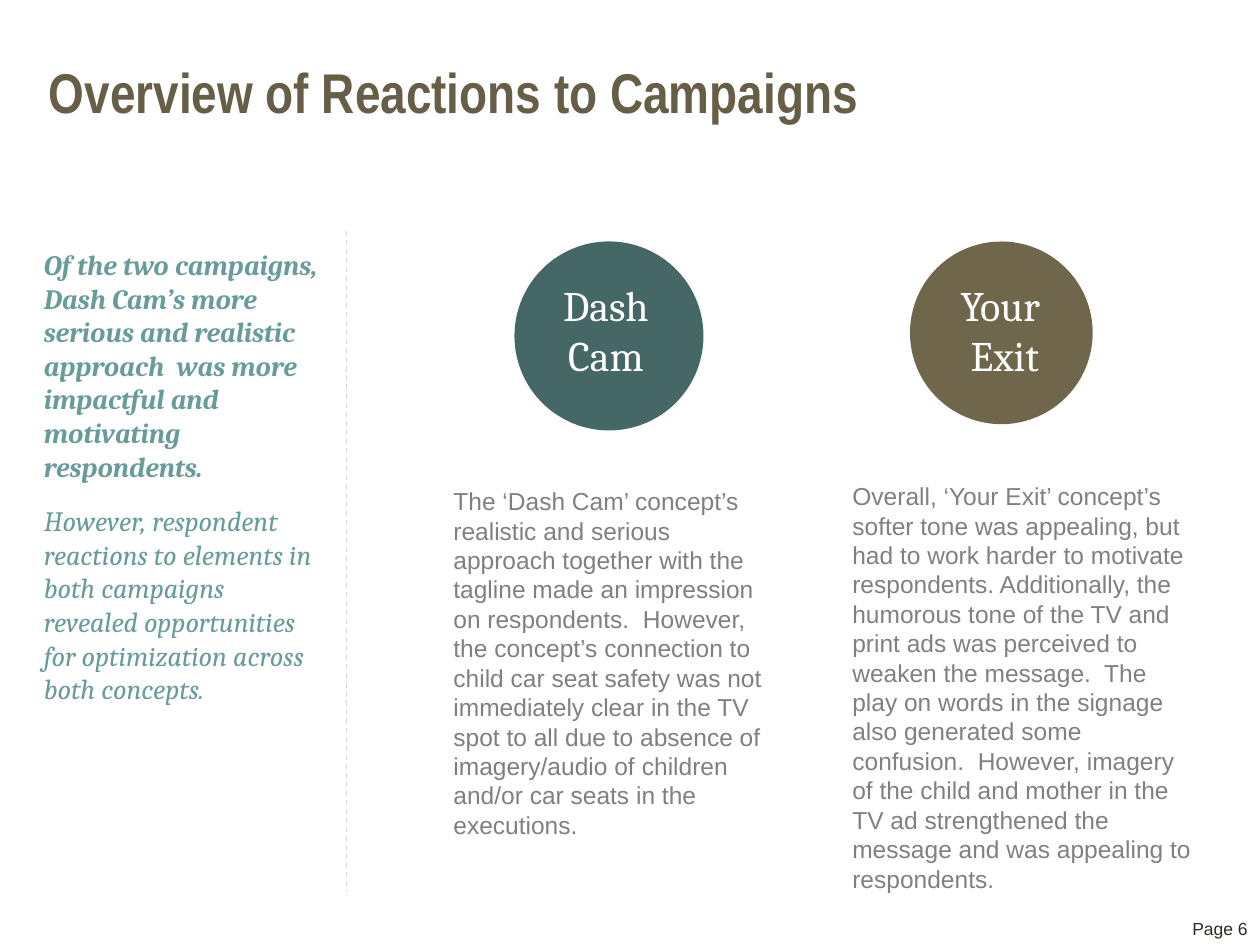
"""Builds the slide that sums up reactions to the two campaigns."""
from lxml.etree import SubElement as Sub
from pptx import Presentation
from pptx.dml.color import RGBColor as Rgb
from pptx.enum.dml import MSO_LINE as Dash
from pptx.enum.shapes import MSO_CONNECTOR as Link, MSO_SHAPE as Shape
from pptx.enum.text import MSO_ANCHOR as Anchor, PP_ALIGN as Align
from pptx.oxml.ns import qn
from pptx.util import Pt

HUES = {
    "title": "675E47", "aqua": "689C9A", "teal": "456867", "olive": "6F664C",
    "gray": "808080", "mid": "7F7F7F", "rule": "D9D9D9", "page": "2F2B20",
    "white": "FFFFFF",
}


def hue(name):
    return Rgb.from_string(HUES[name])


def write(box, paras, font, size, align=Align.LEFT, gap=0, anchor=Anchor.TOP):
    frame = box.text_frame
    frame.word_wrap = True
    frame.vertical_anchor = anchor
    for i, runs in enumerate(paras):
        para = frame.add_paragraph() if i else frame.paragraphs[0]
        para.alignment = align
        para.space_before = para.space_after = Pt(gap)
        for text, color, bold, slant in runs:
            run = para.add_run()
            run.text = text
            run.font.name = font
            run.font.size = Pt(size)
            run.font.bold = bold
            run.font.italic = slant
            run.font.color.rgb = hue(color)


deck = Presentation()
deck.slide_width, deck.slide_height = Pt(720), Pt(540)
slide = deck.slides.add_slide(deck.slide_layouts[6])
shapes = slide.shapes

title = shapes.add_textbox(Pt(28), Pt(14.4), Pt(510), Pt(56.9))
frame = title.text_frame
frame.margin_left = frame.margin_right = 0
frame.margin_top = frame.margin_bottom = 0
write(title, [[("Overview of Reactions to Campaigns", "title", True, False)]],
      "Arial Narrow", 32, anchor=Anchor.BOTTOM)

aside = shapes.add_textbox(Pt(18), Pt(138), Pt(174), Pt(271.5))
write(aside, [
    [("Of the two campaigns, Dash Cam’s more serious and realistic "
      "approach  was more impactful and motivating respondents.",
      "aqua", True, True)],
    [("However, respondent reactions to elements in both campaigns revealed "
      "opportunities for optimization across both concepts.",
      "aqua", False, True)],
], "Cambria", 16, gap=6)

rule = shapes.add_connector(Link.STRAIGHT, Pt(198), Pt(132), Pt(198), Pt(510))
rule.line.color.rgb = hue("rule")
rule.line.width = Pt(0.75)
rule.line.dash_style = Dash.DASH
Sub(rule.element.spPr, qn("a:effectLst"))

discs = [
    (294, 108, "teal", 313, 66.5, ("Dash ", "Cam")),
    (520, 104.4, "olive", 522, 104.4, ("Your ", "Exit")),
]
for left, size, color, start, wide, words in discs:
    disc = shapes.add_shape(Shape.OVAL, Pt(left), Pt(138), Pt(size), Pt(size))
    disc.shadow.inherit = False
    disc.fill.solid()
    disc.fill.fore_color.rgb = hue(color)
    disc.line.fill.background()
    label = shapes.add_textbox(Pt(start), Pt(156.2), Pt(wide), Pt(65.5))
    write(label, [[(word, "white", False, False)] for word in words],
          "Cambria", 24, Align.CENTER)

notes = [
    (252, 274.3, 198, 211, [
        ("The ‘Dash Cam’ concept’s realistic and serious approach together "
         "with the tagline made an impression on respondents.  However, the "
         "concept’s connection to child car seat safety was not immediately "
         "clear in the TV ", "gray", False, False),
        ("spot to all due to absence of imagery/audio of ",
         "mid", False, False),
        ("children and/or car seats in the executions.",
         "gray", False, False)]),
    (480, 271.4, 210, 245, [
        ("Overall, ‘Your Exit’ concept’s softer tone was appealing, but had "
         "to work harder to motivate respondents. Additionally, the humorous "
         "tone of the TV and print ads was perceived to weaken the message.  "
         "The play on words in the signage also generated some confusion.  "
         "However, imagery of the child and mother in the TV ad strengthened "
         "the message and was appealing to respondents.",
         "gray", False, False)]),
]
for left, top, wide, high, runs in notes:
    note = shapes.add_textbox(Pt(left), Pt(top), Pt(wide), Pt(high))
    write(note, [runs], "Arial", 14, gap=6)

page = shapes.add_textbox(Pt(498), Pt(492), Pt(222), Pt(48))
write(page, [[("Page 6", "page", False, False)]], "Arial", 10,
      Align.RIGHT, anchor=Anchor.BOTTOM)

deck.save("out.pptx")
